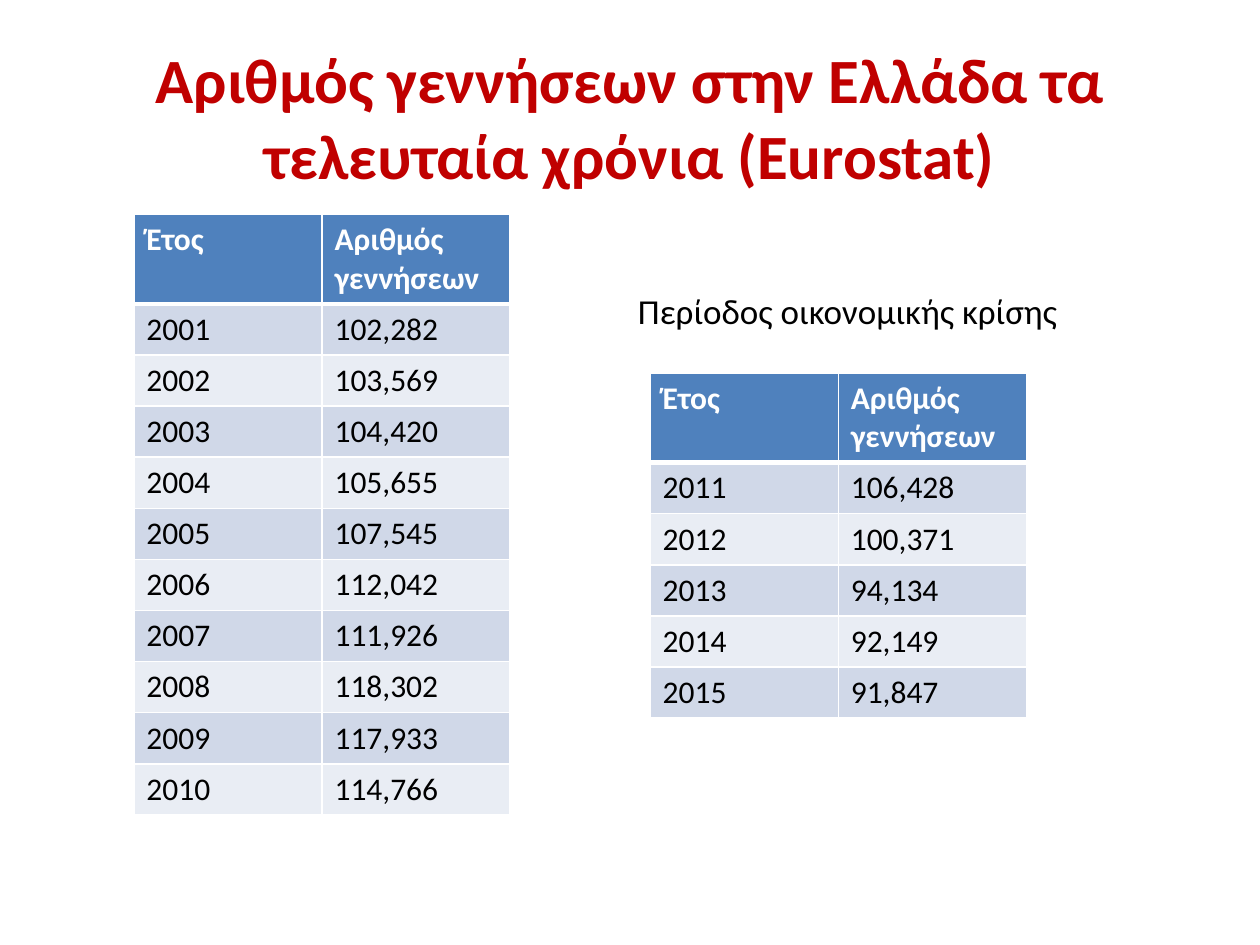
from dataclasses import dataclass

from lxml.etree import SubElement
from pptx import Presentation
from pptx.dml.color import RGBColor
from pptx.enum.text import MSO_ANCHOR, PP_ALIGN
from pptx.oxml.ns import qn
from pptx.slide import Slide
from pptx.table import _Cell
from pptx.text.text import TextFrame
from pptx.util import Pt


@dataclass(frozen=True)
class Theme:
    font: str = "Calibri"
    title_color: str = "C00000"
    text_color: str = "000000"
    light: str = "FFFFFF"
    header_fill: str = "4F81BD"
    band_fills: tuple[str, str] = ("D0D8E8", "E9EDF4")
    title_size: int = 36
    caption_size: int = 20
    table_size: int = 18
    thin_border: int = 1
    thick_border: int = 3


@dataclass(frozen=True)
class BirthTable:
    left: float
    top: float
    first_year: int
    births: tuple[str, ...]


THEME = Theme()
HEADINGS = ("Έτος", "Αριθμός γεννήσεων")
COLUMN_WIDTH = 107.5
HEADER_HEIGHT = 50.4
ROW_HEIGHT = 29.2

BIRTH_TABLES = (
    BirthTable(76.5, 122.5, 2001, (
        "102,282", "103,569", "104,420", "105,655", "107,545",
        "112,042", "111,926", "118,302", "117,933", "114,766")),
    BirthTable(371.5, 213.2, 2011, (
        "106,428", "100,371", "94,134", "92,149", "91,847")),
)


def write_text(frame: TextFrame, text: str, size: int, color: str,
               bold: bool = False, alignment: PP_ALIGN = PP_ALIGN.LEFT) -> None:
    frame.word_wrap = True
    paragraph = frame.paragraphs[0]
    paragraph.alignment = alignment
    run = paragraph.add_run()
    run.text = text
    font_format = {"name": THEME.font, "size": Pt(size), "bold": bold}
    for attribute, value in font_format.items():
        setattr(run.font, attribute, value)
    run.font.color.rgb = RGBColor.from_string(color)


def draw_borders(cell: _Cell, top: int, bottom: int) -> None:
    properties = cell._tc.get_or_add_tcPr()
    widths = {"a:lnL": THEME.thin_border, "a:lnR": THEME.thin_border,
              "a:lnT": top, "a:lnB": bottom}
    for tag, width in widths.items():
        line = SubElement(properties, qn(tag), w=str(Pt(width)))
        fill = SubElement(line, qn("a:solidFill"))
        SubElement(fill, qn("a:srgbClr"), val=THEME.light)


def draw_birth_table(slide: Slide, data: BirthTable) -> None:
    rows = [HEADINGS] + [(str(year), births) for year, births
                         in enumerate(data.births, data.first_year)]
    height = HEADER_HEIGHT + ROW_HEIGHT * len(data.births)
    table = slide.shapes.add_table(
        len(rows), len(HEADINGS), Pt(data.left), Pt(data.top),
        Pt(COLUMN_WIDTH * len(HEADINGS)), Pt(height)).table

    for row_index, values in enumerate(rows):
        is_header = row_index == 0
        table.rows[row_index].height = Pt(HEADER_HEIGHT if is_header else ROW_HEIGHT)
        fill = THEME.header_fill if is_header else THEME.band_fills[(row_index - 1) % 2]
        color = THEME.light if is_header else THEME.text_color
        # The thick rule separates the header from the first year
        top = THEME.thick_border if row_index == 1 else THEME.thin_border
        bottom = THEME.thick_border if is_header else THEME.thin_border
        for column_index, value in enumerate(values):
            cell = table.cell(row_index, column_index)
            draw_borders(cell, top, bottom)
            cell.fill.solid()
            cell.fill.fore_color.rgb = RGBColor.from_string(fill)
            write_text(cell.text_frame, value, THEME.table_size, color, is_header)


def main() -> None:
    presentation = Presentation()
    presentation.slide_width, presentation.slide_height = Pt(720), Pt(540)
    slide = presentation.slides.add_slide(presentation.slide_layouts[5])

    # Title
    title = slide.shapes.title
    placement = {"left": Pt(36), "top": Pt(21.6), "width": Pt(648), "height": Pt(90)}
    for attribute, value in placement.items():
        setattr(title, attribute, value)
    title.text_frame.vertical_anchor = MSO_ANCHOR.MIDDLE
    write_text(title.text_frame, "Αριθμός γεννήσεων στην Ελλάδα τα τελευταία χρόνια (Eurostat)",
               THEME.title_size, THEME.title_color, True, PP_ALIGN.CENTER)

    # Births by year, before and during the crisis
    for data in BIRTH_TABLES:
        draw_birth_table(slide, data)

    # Caption above the crisis years
    caption = slide.shapes.add_textbox(Pt(348.5), Pt(162), Pt(272), Pt(31.5))
    write_text(caption.text_frame, "Περίοδος οικονομικής κρίσης",
               THEME.caption_size, THEME.text_color, alignment=PP_ALIGN.CENTER)

    presentation.save("out.pptx")


if __name__ == "__main__":
    main()
